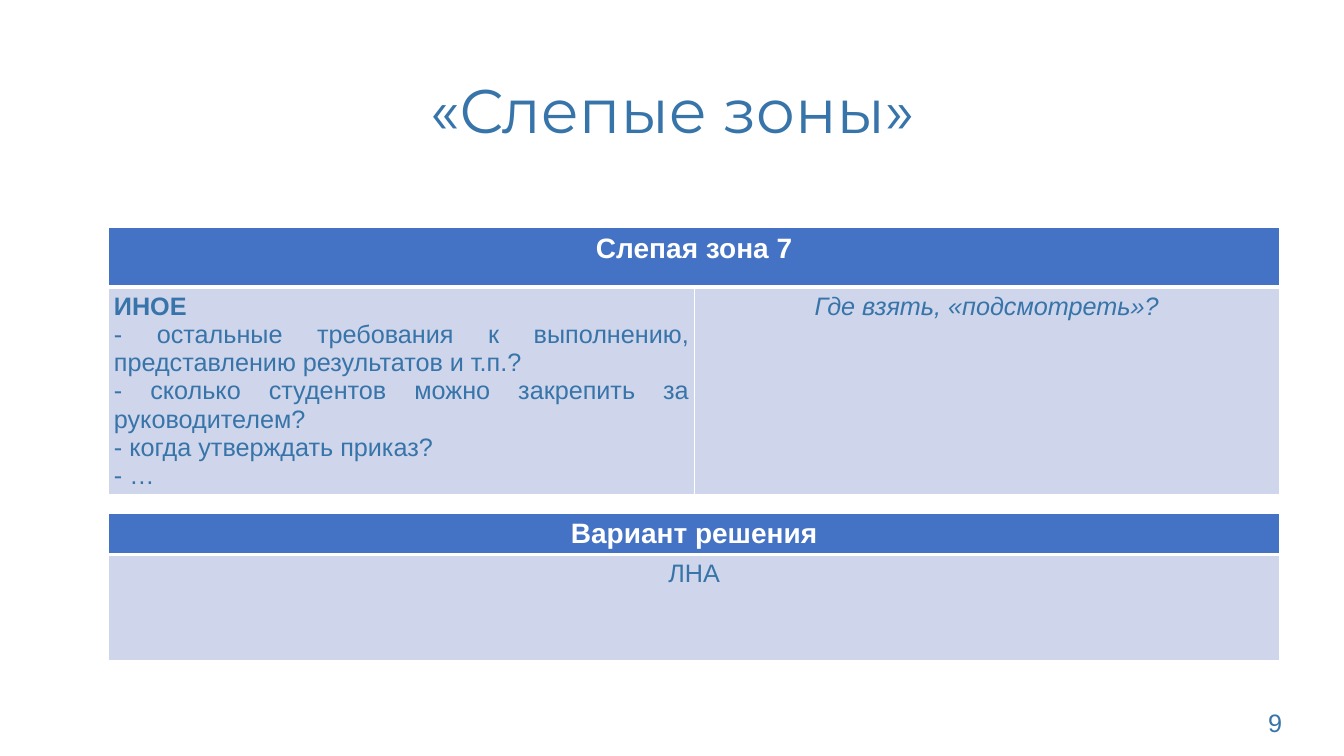
from lxml import etree
from pptx import Presentation
from pptx.dml.color import RGBColor
from pptx.enum.text import MSO_ANCHOR, PP_ALIGN
from pptx.oxml.ns import qn
from pptx.util import Inches, Pt

CENTER, JUSTIFY, LEFT = PP_ALIGN.CENTER, PP_ALIGN.JUSTIFY, PP_ALIGN.LEFT
MIDDLE = MSO_ANCHOR.MIDDLE
TEXT_BLUE = RGBColor(0x37, 0x74, 0xA9)
HEADER_BLUE = RGBColor(0x44, 0x72, 0xC4)
BODY_BLUE = RGBColor(0xCF, 0xD5, 0xEA)
WHITE = RGBColor(0xFF, 0xFF, 0xFF)
TABLE_LEFT, TABLE_WIDTH = 1.08, 11.61
INSET = Inches(0.05)


def write(frame, *lines, size=18, font="Arial", color=TEXT_BLUE, align=CENTER,
          bold=False, italic=False, bold_first=False, spacing=None):
    frame.word_wrap = True
    for index, line in enumerate(lines):
        paragraph = frame.paragraphs[0] if index == 0 else frame.add_paragraph()
        paragraph.alignment = align
        paragraph.line_spacing = spacing
        run = paragraph.add_run()
        run.text = line
        run.font.name, run.font.size = font, Pt(size)
        run.font.color.rgb = color
        run.font.bold = bold or (bold_first and index == 0)
        run.font.italic = italic


def add_zone_table(top, row_heights, columns):
    """Add a table with a blue header row, pale body rows and white rules."""
    table = slide.shapes.add_table(
        len(row_heights), columns, Inches(TABLE_LEFT), Inches(top),
        Inches(TABLE_WIDTH), Inches(sum(row_heights))).table
    for row_index, height in enumerate(row_heights):
        table.rows[row_index].height = Inches(height)
        for cell in table.rows[row_index].cells:
            cell.margin_left = cell.margin_right = INSET
            cell.margin_top = cell.margin_bottom = INSET
            properties = cell._tc.get_or_add_tcPr()
            for side in ("L", "R", "T", "B"):
                header_rule = (row_index, side) in ((0, "B"), (1, "T"))
                rule = etree.SubElement(properties, qn(f"a:ln{side}"),
                                        w=str(Pt(3 if header_rule else 1)))
                fill = etree.SubElement(rule, qn("a:solidFill"))
                etree.SubElement(fill, qn("a:srgbClr"), val=str(WHITE))
            cell.fill.solid()
            cell.fill.fore_color.rgb = BODY_BLUE if row_index else HEADER_BLUE
    return table


presentation = Presentation()
presentation.slide_width, presentation.slide_height = Inches(13.33), Inches(7.5)
slide = presentation.slides.add_slide(presentation.slide_layouts[5])

# Title
title = slide.shapes.title
title.left, title.top = Inches(0.92), Inches(0.4)
title.width, title.height = Inches(11.5), Inches(1.45)
title.text_frame.vertical_anchor = MIDDLE
write(title.text_frame, "«Слепые зоны»", size=44, font="Montserrat", spacing=0.9)

# Blind zone and its open questions
blind_zone = add_zone_table(2.26, (0.59, 2.05), columns=2)
blind_zone.cell(0, 0).merge(blind_zone.cell(0, 1))
write(blind_zone.cell(0, 0).text_frame, "Слепая зона 7",
      size=20, color=WHITE, bold=True)
write(blind_zone.cell(1, 0).text_frame,
      "ИНОЕ",
      "- остальные требования к выполнению, представлению результатов и т.п.?",
      "- сколько студентов можно закрепить за руководителем?",
      "- когда утверждать приказ?",
      "- …",
      align=JUSTIFY, bold_first=True)
write(blind_zone.cell(1, 1).text_frame, "Где взять, «подсмотреть»?", italic=True)

# Proposed solution
solution = add_zone_table(5.09, (0.4, 1.05), columns=1)
write(solution.cell(0, 0).text_frame, "Вариант решения",
      size=20, color=WHITE, bold=True)
write(solution.cell(1, 0).text_frame, "ЛНА")

# Slide number
page_number = slide.shapes.add_textbox(
    Inches(12.48), Inches(6.97), Inches(0.69), Inches(0.4))
write(page_number.text_frame, "9", align=LEFT)

presentation.save("out.pptx")
